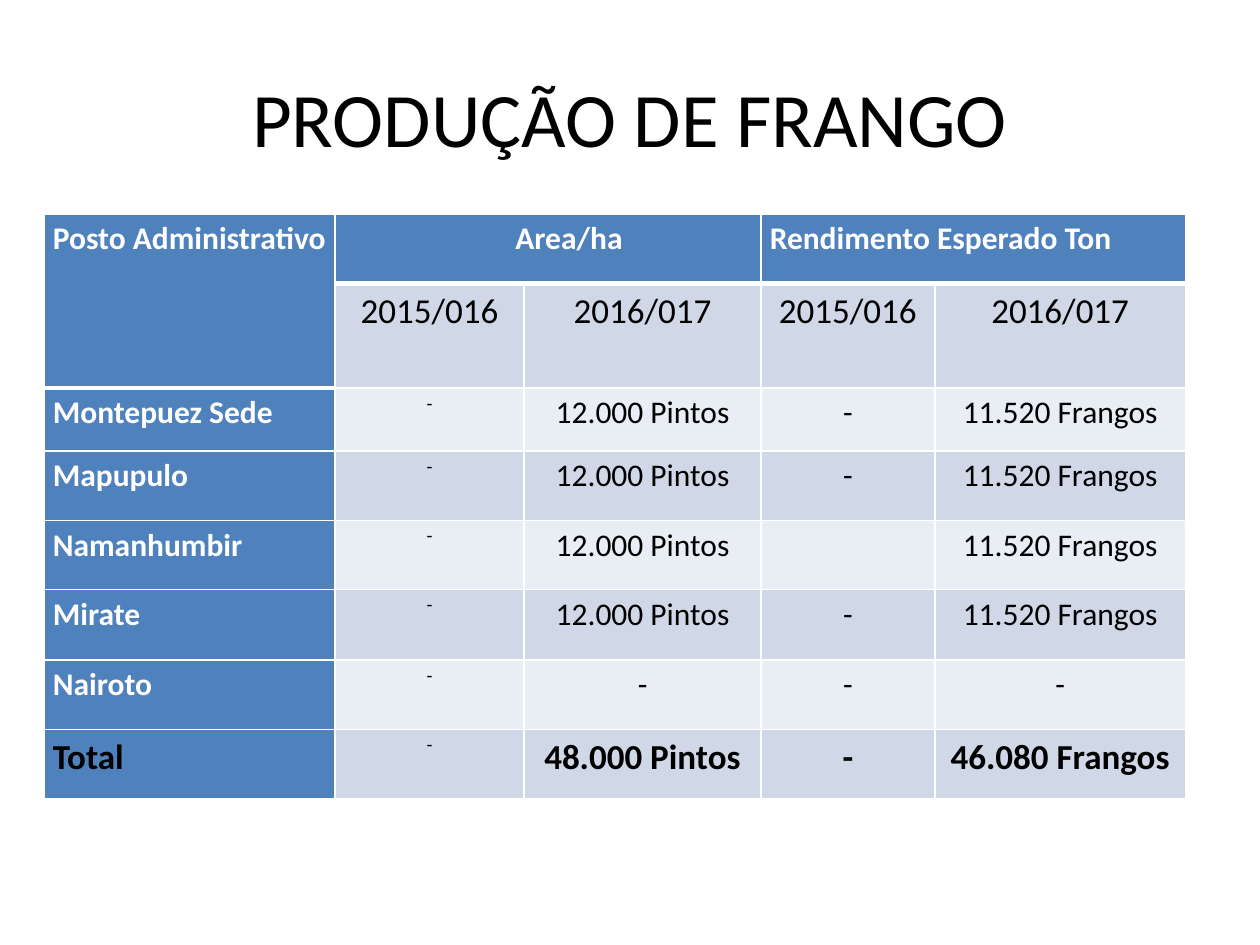
from pptx import Presentation
from pptx.util import Inches, Pt
from pptx.dml.color import RGBColor
from pptx.enum.text import PP_ALIGN, MSO_ANCHOR
from pptx.oxml.ns import qn
from lxml.etree import SubElement

TITLE = "PRODUÇÃO DE FRANGO"
ROWS = [
    ["Posto Administrativo", "Area/ha", "", "Rendimento Esperado Ton", ""],
    ["", "2015/016", "2016/017", "2015/016", "2016/017"],
    ["Montepuez Sede", "-", "12.000 Pintos", "-", "11.520 Frangos"],
    ["Mapupulo", "-", "12.000 Pintos", "-", "11.520 Frangos"],
    ["Namanhumbir", "-", "12.000 Pintos", "", "11.520 Frangos"],
    ["Mirate", "-", "12.000 Pintos", "-", "11.520 Frangos"],
    ["Nairoto", "-", "-", "-", "-"],
    ["Total", "-", "48.000 Pintos", "-", "46.080 Frangos"],
]
MERGES = [((0, 0), (1, 0)), ((0, 1), (0, 2)), ((0, 3), (0, 4))]
COL_WIDTHS = [2.31, 1.5, 1.88, 1.38, 1.99]
ROW_HEIGHTS = [0.55, 0.83, 0.5, 0.55, 0.55, 0.56, 0.55, 0.55]
COLORS = {"head": "4F81BD", "dark": "D0D8E8", "light": "E9EDF4",
          "white": "FFFFFF", "black": "000000"}
FONT = "Calibri"
YEARS, TOTAL = 1, len(ROWS) - 1


def rgb(name):
    return RGBColor.from_string(COLORS[name])


def format_runs(p, size, color, bold=False):
    for r in p.runs:
        r.font.name = FONT
        r.font.size = Pt(size)
        r.font.bold = bold
        r.font.color.rgb = rgb(color)


def set_borders(cell, widths):
    tcPr = cell._tc.get_or_add_tcPr()
    for side, width in widths.items():
        ln = SubElement(tcPr, qn(f"a:ln{side}"), w=str(Pt(width)))
        fill = SubElement(ln, qn("a:solidFill"))
        SubElement(fill, qn("a:srgbClr"), val=COLORS["white"])


def format_cell(cell, row, col, text):
    header = row == 0 or col == 0
    head_end = 1 if col == 0 else 0
    set_borders(cell, {"L": 1, "R": 1,
                       "T": 3 if row == head_end + 1 else 1,
                       "B": 3 if row in (0, head_end) else 1})
    cell.fill.solid()
    cell.fill.fore_color.rgb = rgb("head" if header else "dark" if row % 2 else "light")
    if row != YEARS:
        cell.margin_left = cell.margin_right = Inches(0.07)
        cell.margin_top = cell.margin_bottom = 0
    if text == "Area/ha":
        cell.margin_left = Inches(1.43)
    if not text:
        return
    p = cell.text_frame.paragraphs[0]
    p.text = text
    p.alignment = PP_ALIGN.LEFT if header else PP_ALIGN.CENTER
    if row != YEARS:
        p.line_spacing = 1.15
    small = col == 1 and row > YEARS
    size = 11 if small else 20 if row in (YEARS, TOTAL) else 18
    color = "white" if header and row != TOTAL else "black"
    format_runs(p, size, color, header or (row == TOTAL and not small))


def main():
    prs = Presentation()
    prs.slide_width, prs.slide_height = Inches(10), Inches(7.5)
    s = prs.slides.add_slide(prs.slide_layouts[5])

    title = s.shapes.title
    title.left, title.top = Inches(0.5), Inches(0.3)
    title.width, title.height = Inches(9), Inches(1.25)
    tf = title.text_frame
    tf.text = TITLE
    tf.vertical_anchor = MSO_ANCHOR.MIDDLE
    tf.paragraphs[0].alignment = PP_ALIGN.CENTER
    format_runs(tf.paragraphs[0], 44, "black")

    table = s.shapes.add_table(len(ROWS), len(COL_WIDTHS), Inches(0.35), Inches(1.7),
                               Inches(sum(COL_WIDTHS)), Inches(sum(ROW_HEIGHTS))).table
    for column, width in zip(table.columns, COL_WIDTHS):
        column.width = Inches(width)
    for line, height in zip(table.rows, ROW_HEIGHTS):
        line.height = Inches(height)
    for first, last in MERGES:
        table.cell(*first).merge(table.cell(*last))
    for row, texts in enumerate(ROWS):
        for col, text in enumerate(texts):
            format_cell(table.cell(row, col), row, col, text)

    prs.save("out.pptx")


if __name__ == "__main__":
    main()
